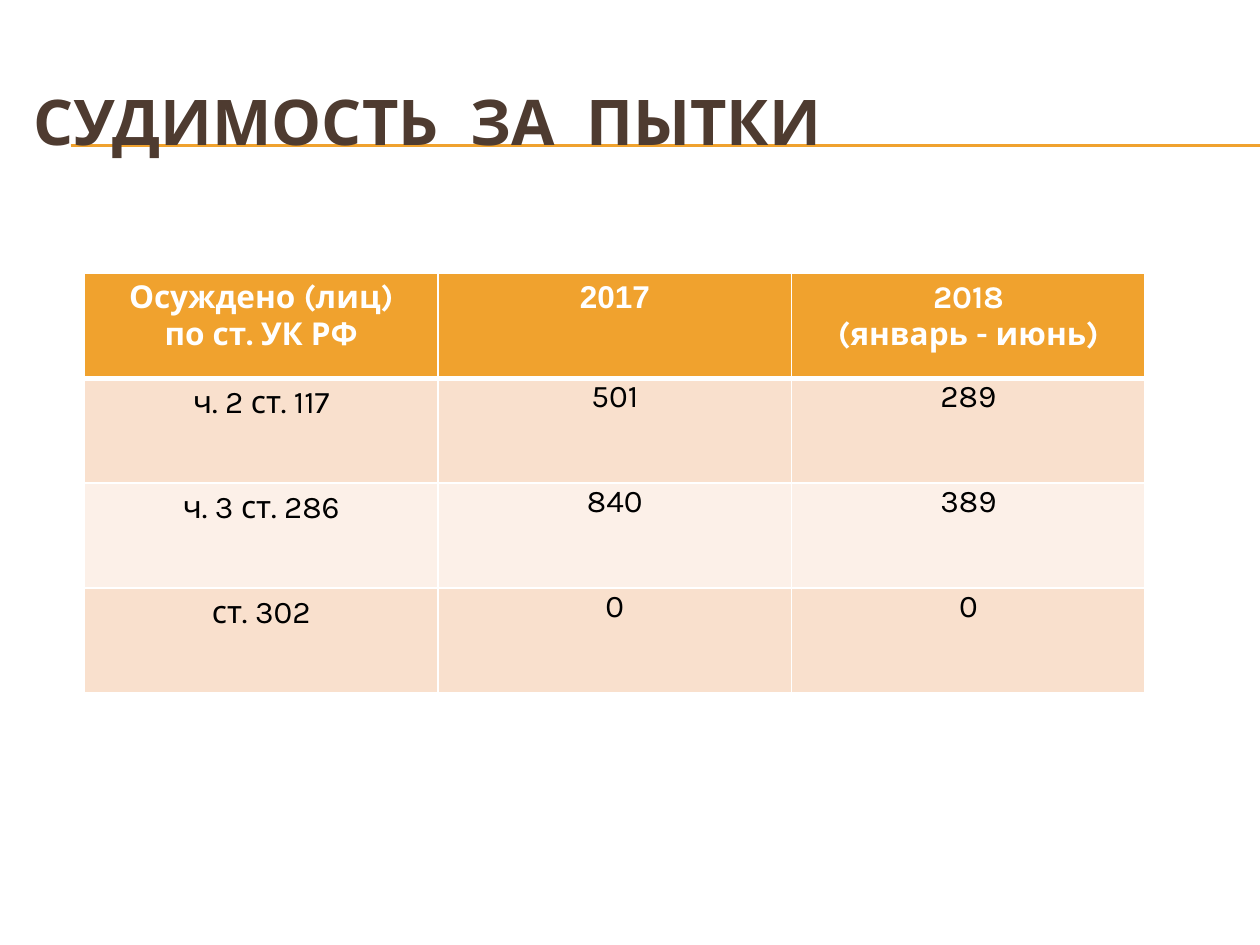
from typing import NamedTuple

from lxml.etree import SubElement
from pptx import Presentation
from pptx.dml.color import RGBColor
from pptx.enum.shapes import MSO_CONNECTOR as Connector
from pptx.enum.text import MSO_ANCHOR as Anchor, PP_ALIGN as Align
from pptx.oxml import parse_xml
from pptx.oxml.ns import nsdecls, qn
from pptx.util import Inches, Pt

ORANGE, BROWN, WHITE, BLACK = "F0A22E", "4E3B30", "FFFFFF", "000000"
BANDS = ("F9E0CD", "FCF0E8")
FONT = "Karla"


class CellStyle(NamedTuple):
    fill: str
    color: str
    bold: bool = False
    font: str = FONT
    tight: bool = False
    bottom_border: float = 1


HEADER = CellStyle(ORANGE, WHITE, bold=True, bottom_border=3)
HEADER_STYLES = (HEADER, HEADER._replace(font="Arial"), HEADER)

ROWS = (
    ("Осуждено (лиц)\nпо ст. УК РФ", "2017", "2018\n(январь - июнь)"),
    ("ч. 2 ст. 117", "501", "289"),
    ("ч. 3 ст. 286", "840", "389"),
    ("ст. 302", "0", "0"),
)


def rgb(value: str) -> RGBColor:
    return RGBColor.from_string(value)


def set_font(paragraph, name: str, size: float, color: str, bold: bool) -> None:
    font = paragraph.font
    font.name, font.size, font.bold = name, Pt(size), bold
    font.color.rgb = rgb(color)


def add_rule(slide, top: float) -> None:
    rule = slide.shapes.add_connector(
        Connector.STRAIGHT, Inches(0.56), Inches(top), Inches(10), Inches(top))
    rule.line.color.rgb = rgb(ORANGE)
    rule.line.width = Pt(0.75)
    SubElement(rule._element.spPr, qn("a:effectLst"))


def add_title(slide, text: str) -> None:
    box = slide.shapes.add_textbox(Inches(0.17), Inches(0.33), Inches(10), Inches(1.25))
    frame = box.text_frame
    frame.word_wrap = True
    frame.vertical_anchor = Anchor.MIDDLE
    frame.text = text
    set_font(frame.paragraphs[0], FONT, 36, BROWN, True)


def set_borders(cell, bottom: float) -> None:
    properties = cell._tc.get_or_add_tcPr()
    # Borders must come before the fill
    for index, (side, width) in enumerate((("L", 1), ("R", 1), ("T", 1), ("B", bottom))):
        properties.insert(index, parse_xml(
            f'<a:ln{side} {nsdecls("a")} w="{Pt(width)}"><a:solidFill>'
            f'<a:srgbClr val="{WHITE}"/></a:solidFill></a:ln{side}>'))


def fill_cell(cell, text: str, style: CellStyle) -> None:
    cell.text = text
    for paragraph in cell.text_frame.paragraphs:
        paragraph.alignment = Align.CENTER
        set_font(paragraph, style.font, 18, style.color, style.bold)
    if style.tight:
        cell.margin_left = cell.margin_right = Inches(0.07)
        cell.margin_top = cell.margin_bottom = 0
    cell.fill.solid()
    cell.fill.fore_color.rgb = rgb(style.fill)
    set_borders(cell, style.bottom_border)


def cell_style(row: int, column: int) -> CellStyle:
    if row == 0:
        return HEADER_STYLES[column]
    return CellStyle(BANDS[(row - 1) % 2], BLACK, tight=column > 0)


def add_convictions_table(slide) -> None:
    table = slide.shapes.add_table(
        len(ROWS), len(ROWS[0]),
        Inches(0.67), Inches(2.17), Inches(8.42), Inches(3.33)).table
    for row, texts in enumerate(ROWS):
        for column, text in enumerate(texts):
            fill_cell(table.cell(row, column), text, cell_style(row, column))


def main() -> None:
    presentation = Presentation()
    presentation.slide_width, presentation.slide_height = Inches(10), Inches(7.5)
    slide = presentation.slides.add_slide(presentation.slide_layouts[6])

    # Double rule behind the title
    for top in (1.15, 1.16):
        add_rule(slide, top)
    add_title(slide, "СУДИМОСТЬ  ЗА  ПЫТКИ")

    # Convictions by article and year
    add_convictions_table(slide)

    presentation.save("out.pptx")


if __name__ == "__main__":
    main()
